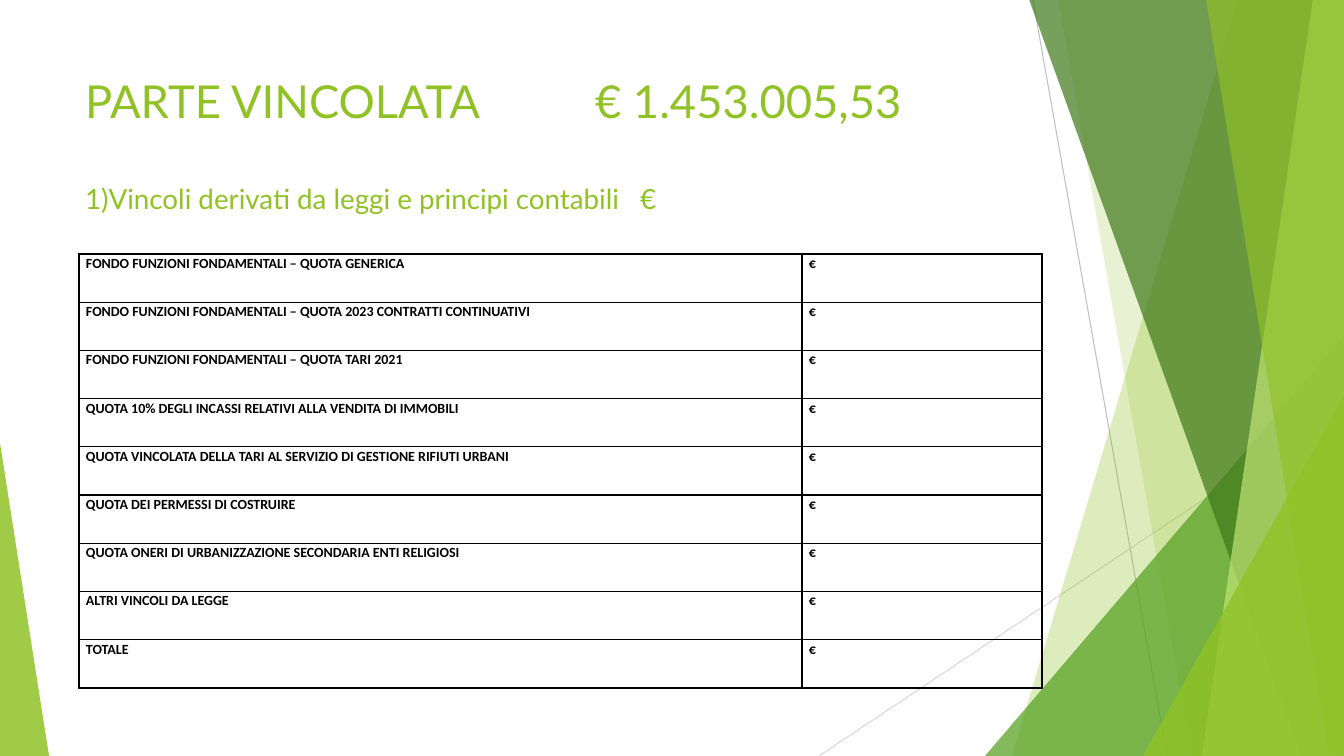
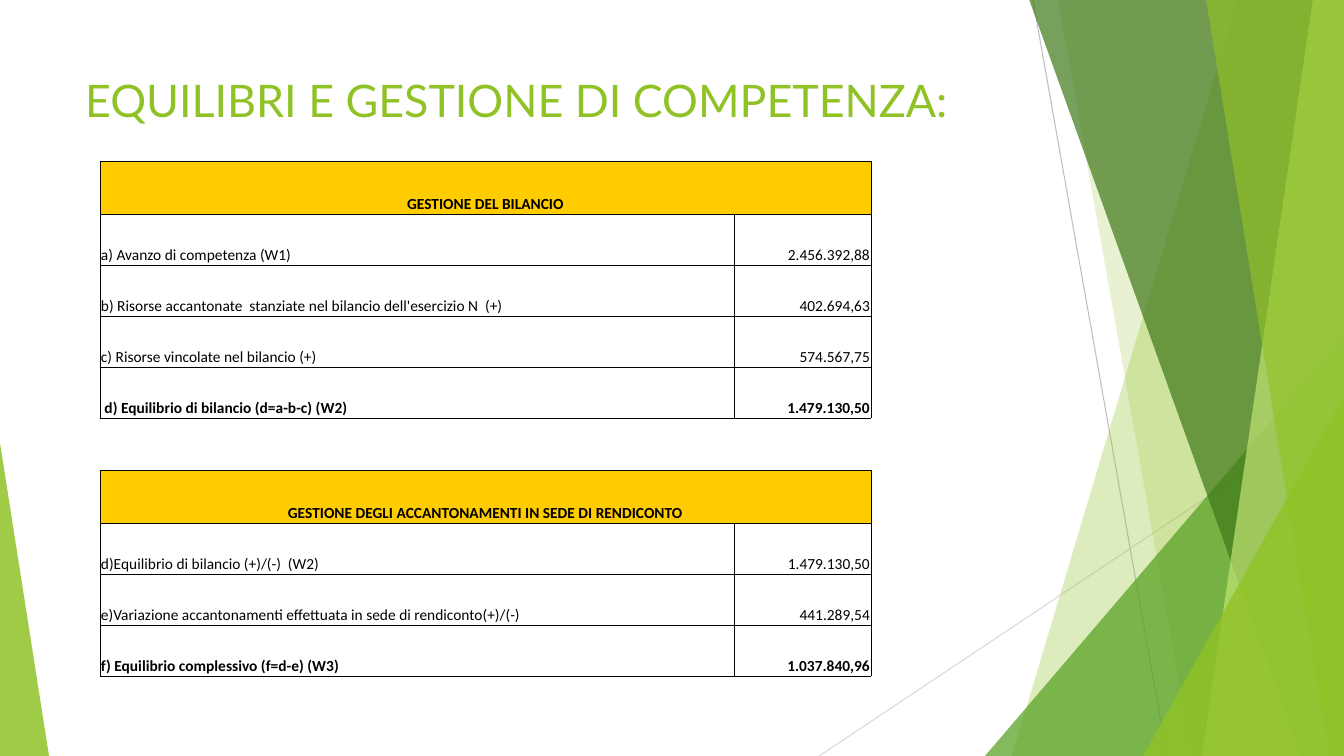
from dataclasses import dataclass

from lxml.etree import SubElement
from pptx import Presentation
from pptx.dml.color import RGBColor
from pptx.enum.shapes import MSO_CONNECTOR, MSO_SHAPE
from pptx.enum.text import MSO_ANCHOR as ANCHOR, MSO_AUTO_SIZE, PP_ALIGN as ALIGN
from pptx.oxml.ns import qn
from pptx.util import Emu, Pt

PX = 914400 / 100.8
WIDTH, HEIGHT = 1344, 756
NO_STYLE = "{2D5ABB26-0587-4C30-8999-92F81FD0307C}"


@dataclass(frozen=True)
class Theme:
    green: str = "90C226"
    leaf: str = "54A021"
    forest: str = "3F7819"
    lime: str = "C0E474"
    grey: str = "BFBFBF"
    pale_grey: str = "D9D9D9"
    yellow: str = "FFCC00"
    black: str = "000000"
    title_font: str = "Lato"
    table_font: str = "Calibri"
    title: float = 32
    wide_title: float = 32.4
    subtitle: float = 19.8
    funds: float = 10
    balance: float = 11


T = Theme()

# Rays: start, end, colour
RAYS = [((1033, 0), (1167, HEIGHT), T.grey), ((1344, 406), (819, HEIGHT), T.pale_grey)]

# Back to front. Band: top x, bottom x; wedge: left, top, width, apex (0 left, 1 right)
FACETS = [
    ("band", (1238, 1012), T.green, 30),
    ("band", (1058, 1192), T.green, 20),
    ("wedge", (985, 336, 359, 1), T.leaf, 72),
    ("band", (1029, 1301), T.forest, 70),
    ("band", (1313, 1202), T.lime, 70),
    ("band", (1206, 1329), T.green, 65),
    ("wedge", (1143, 396, 201, 1), T.green, 80),
    ("wedge", (0, 443, 49, 0), T.green, 85),
]

# Title lines: text, size, space before in points, tab stop in px
FUNDS_TITLE = [
    ("PARTE VINCOLATA\t€ 1.453.005,53", T.wide_title, 0, 510),
    ("1)Vincoli derivati da leggi e principi contabili\t€", T.subtitle, 39, 555),
]
FUNDS = [
    "FONDO FUNZIONI FONDAMENTALI – QUOTA GENERICA",
    "FONDO FUNZIONI FONDAMENTALI – QUOTA 2023 CONTRATTI CONTINUATIVI",
    "FONDO FUNZIONI FONDAMENTALI – QUOTA TARI 2021",
    "QUOTA 10% DEGLI INCASSI RELATIVI ALLA VENDITA DI IMMOBILI",
    "QUOTA VINCOLATA DELLA TARI AL SERVIZIO DI GESTIONE RIFIUTI URBANI",
    "QUOTA DEI PERMESSI DI COSTRUIRE",
    "QUOTA ONERI DI URBANIZZAZIONE SECONDARIA ENTI RELIGIOSI",
    "ALTRI VINCOLI DA LEGGE",
    "TOTALE",
]

BALANCE_TITLE = [("EQUILIBRI E GESTIONE DI COMPETENZA:", T.title, 0, None)]
# Kind of row, then its texts
BALANCE = [
    ("head", "GESTIONE DEL BILANCIO", ""),
    ("item", "a) Avanzo di competenza (W1)", "2.456.392,88"),
    ("item", "b) Risorse accantonate  stanziate nel bilancio dell'esercizio N  (+)", "402.694,63"),
    ("item", "c) Risorse vincolate nel bilancio (+)", "574.567,75"),
    ("total", " d) Equilibrio di bilancio (d=a-b-c) (W2)", "1.479.130,50"),
    ("gap", "", ""),
    ("head", "GESTIONE DEGLI ACCANTONAMENTI IN SEDE DI RENDICONTO", ""),
    ("item", "d)Equilibrio di bilancio (+)/(-)  (W2)", "1.479.130,50"),
    ("item", "e)Variazione accantonamenti effettuata in sede di rendiconto(+)/(-)", "441.289,54"),
    ("total", "f) Equilibrio complessivo (f=d-e) (W3)", "1.037.840,96"),
]
ROW_HEIGHTS = {"head": 53, "item": 51, "total": 51, "gap": 52}


def px(n):
    return Emu(round(n * PX))


def rgb(colour):
    return RGBColor.from_string(colour)


def add_ray(slide, start, end, colour):
    line = slide.shapes.add_connector(MSO_CONNECTOR.STRAIGHT, *map(px, start + end))
    line.line.color.rgb = rgb(colour)
    line.line.width = Pt(0.75)
    SubElement(line.element.spPr, qn("a:effectLst"))
    return line


def add_facet(slide, kind, place, colour, opacity):
    if kind == "band":
        top_x, bottom_x = place
        outline = slide.shapes.build_freeform(top_x, -1, scale=PX)
        outline.add_line_segments([(WIDTH, -1), (WIDTH, HEIGHT), (bottom_x, HEIGHT)])
        sp = outline.convert_to_shape()
    else:
        left, top, width, apex = place
        box = map(px, (left, top, width, HEIGHT - top))
        sp = slide.shapes.add_shape(MSO_SHAPE.ISOSCELES_TRIANGLE, *box)
        sp.adjustments[0] = apex
    sp.shadow.inherit = False
    sp.fill.solid()
    sp.fill.fore_color.rgb = rgb(colour)
    clr = sp.element.spPr.find(".//" + qn("a:srgbClr"))
    SubElement(clr, qn("a:alpha"), val=str(opacity * 1000))
    sp.line.fill.background()
    return sp


def decorate_layout(layout, slide):
    """Draw the facets on a slide and move them to the layout all slides share."""
    for ph in list(layout.placeholders):
        if ph.placeholder_format.idx != 0:
            ph.element.getparent().remove(ph.element)
    parts = [add_ray(slide, *ray) for ray in RAYS]
    parts += [add_facet(slide, *facet) for facet in FACETS]
    for part in parts:
        layout.shapes.element.append(part.element)


def set_title(slide, lines, height):
    title = slide.shapes.title
    title.left, title.top, title.width, title.height = map(px, (75, 68, 948, height))
    tf = title.text_frame
    tf.word_wrap = True
    tf.auto_size = MSO_AUTO_SIZE.NONE
    tf.vertical_anchor = ANCHOR.TOP
    for i, (text, size, before, tab) in enumerate(lines):
        p = tf.add_paragraph() if i else tf.paragraphs[0]
        p.text = text
        p.alignment = ALIGN.LEFT
        p.space_before = Pt(before)
        p.font.name, p.font.size = T.title_font, Pt(size)
        p.font.color.rgb = rgb(T.green)
        if tab:
            stops = p._p.get_or_add_pPr().makeelement(qn("a:tabLst"))
            SubElement(stops, qn("a:tab"), pos=str(px(tab)), algn="l")
            p.font._element.addprevious(stops)


def add_plain_table(slide, left, top, col_widths, height, row_count):
    frame = slide.shapes.add_table(row_count, len(col_widths), px(left), px(top),
                                   px(sum(col_widths)), px(height))
    frame.element.find(".//" + qn("a:tableStyleId")).text = NO_STYLE
    table = frame.table
    table.first_row = table.horz_banding = False
    for column, width in zip(table.columns, col_widths):
        column.width = px(width)
    return table


def set_cell(cell, text, size, bold, border, insets, align=ALIGN.LEFT,
             anchor=ANCHOR.TOP, fill=None):
    """Write and frame one cell; border is in points, insets in px (l, t, r, b)."""
    cell.margin_left, cell.margin_top, cell.margin_right, cell.margin_bottom = map(px, insets)
    cell.vertical_anchor = anchor
    p = cell.text_frame.paragraphs[0]
    p.text = text
    p.alignment = align
    p.font.name, p.font.size, p.font.bold = T.table_font, Pt(size), bold
    p.font.color.rgb = rgb(T.black)
    tc_pr = cell._tc.get_or_add_tcPr()
    for side in "LRTB":
        ln = SubElement(tc_pr, qn("a:ln" + side), w=str(Pt(border)))
        SubElement(SubElement(ln, qn("a:solidFill")), qn("a:srgbClr"), val=T.black)
    if fill:
        cell.fill.solid()
        cell.fill.fore_color.rgb = rgb(fill)
    else:
        cell.fill.background()
    return p


def add_funds_table(slide):
    table = add_plain_table(slide, 79, 254, (723, 240), 434, len(FUNDS))
    for r, fund in enumerate(FUNDS):
        for c, text in enumerate((fund, "€")):
            p = set_cell(table.cell(r, c), text, T.funds, True, 1, (7, 0, 7, 0))
            p.line_spacing = 1.07
            p.space_after = Pt(8)


def add_balance_table(slide):
    heights = [ROW_HEIGHTS[kind] for kind, *_ in BALANCE]
    table = add_plain_table(slide, 100, 161, (634, 137, 114), sum(heights), len(BALANCE))
    for r, (kind, *texts) in enumerate(BALANCE):
        table.rows[r].height = px(heights[r])
        if kind == "gap":
            continue
        head = kind == "head"
        if head:
            table.cell(r, 0).merge(table.cell(r, 1))
        aligns = (ALIGN.CENTER if head else ALIGN.LEFT, ALIGN.RIGHT)
        for c, (text, align) in enumerate(zip(texts, aligns)):
            set_cell(table.cell(r, c), text, T.balance, kind != "item", 0.5, (1, 1, 1, 0),
                     align, ANCHOR.BOTTOM, T.yellow if head else None)


def main():
    prs = Presentation()
    prs.slide_width, prs.slide_height = px(WIDTH), px(HEIGHT)
    layout = prs.slide_layouts.get_by_name("Title Only")

    funds = prs.slides.add_slide(layout)
    decorate_layout(layout, funds)
    set_title(funds, FUNDS_TITLE, 145)
    add_funds_table(funds)

    balance = prs.slides.add_slide(layout)
    set_title(balance, BALANCE_TITLE, 66)
    add_balance_table(balance)

    prs.save("out.pptx")


if __name__ == "__main__":
    main()
